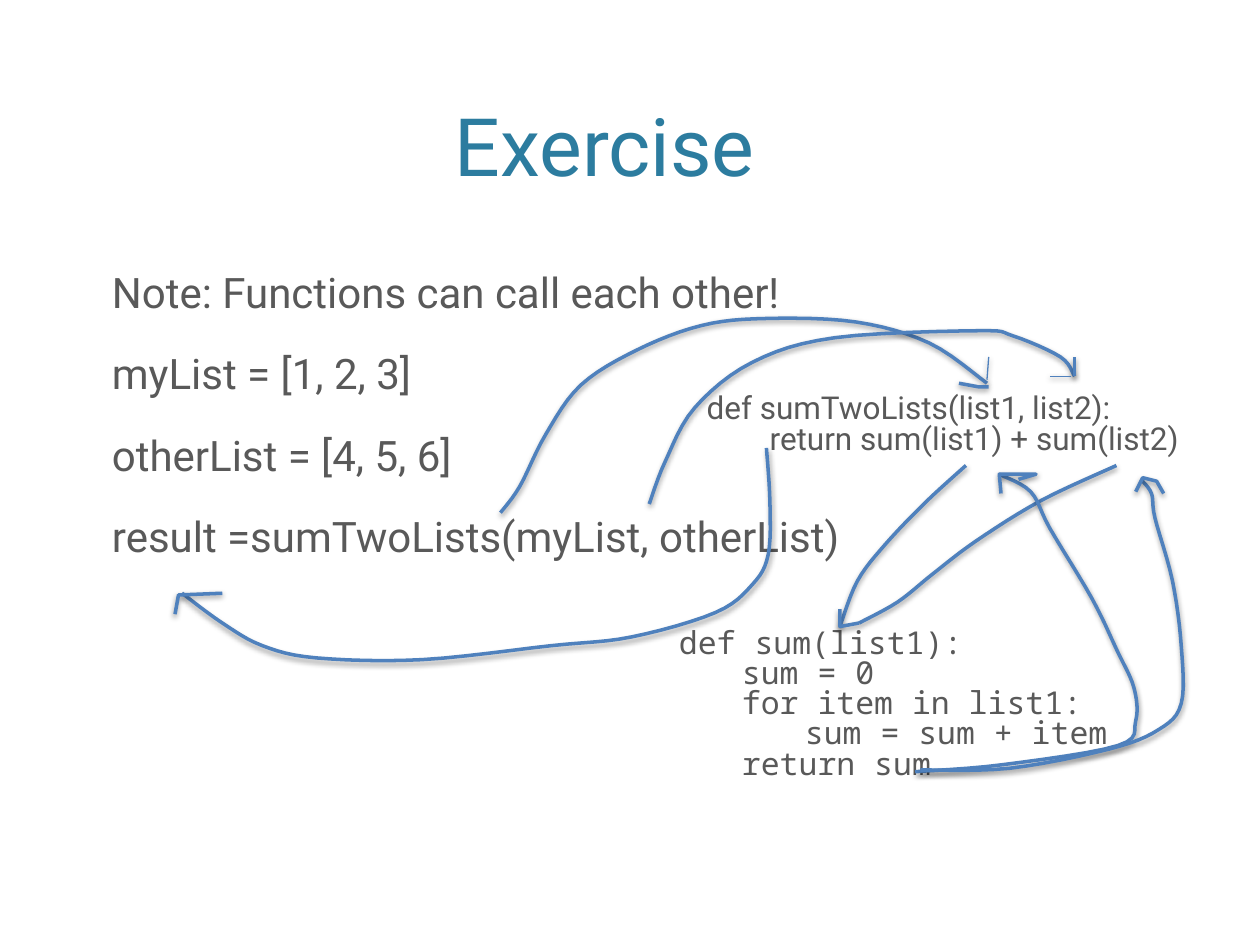
"""Build a slide showing how two list functions call each other."""
from lxml.etree import SubElement
from pptx import Presentation
from pptx.dml.color import RGBColor
from pptx.enum.shapes import MSO_CONNECTOR
from pptx.enum.text import MSO_ANCHOR, PP_ALIGN
from pptx.oxml.ns import qn
from pptx.util import Pt

TEXT_COLOR = "595959"
STROKE_COLOR = "4F81BD"
TAB_STEP = 36
CURVE_STEPS = 6

TITLE = ["Exercise"]
NOTES = [
    "Note: Functions can call each other!",
    "myList = [1, 2, 3]",
    "otherList = [4, 5, 6]",
    "result =sumTwoLists(myList, otherList)",
]
SUM_CODE = [
    "def sum(list1):",
    "\tsum = 0",
    "\tfor item in list1:",
    "\t\tsum = sum + item",
    "\treturn sum",
]
SUM_TWO_CODE = [
    "def sumTwoLists(list1, list2):",
    "\treturn sum(list1) + sum(list2)",
]

CURVES = {
    "my_list_to_list1": [(286, 293), (297, 278), (312, 248), (332, 220), (364, 200),
                         (401, 186), (438, 182), (489, 184), (531, 196), (564, 219)],
    "other_list_to_list2": [(371, 288), (380, 264), (397, 233), (430, 207), (477, 193),
                            (559, 189), (579, 192), (606, 204), (614, 215)],
    "list1_to_sum": [(552, 266), (529, 287), (506, 311), (490, 332), (480, 358)],
    "list2_to_sum": [(638, 266), (595, 286), (558, 309), (533, 328), (513, 344), (491, 356)],
    "sum_to_first_call": [(523, 441), (573, 437), (639, 426), (649, 412), (648, 393),
                          (638, 371), (624, 342), (600, 302), (589, 281), (571, 271)],
    "sum_to_second_call": [(526, 440), (577, 439), (634, 428), (662, 417), (675, 402),
                           (675, 369), (670, 332), (660, 296), (658, 282), (652, 274)],
    "return_to_result": [(438, 256), (440, 287), (439, 317), (430, 334), (409, 350),
                         (361, 364), (315, 369), (241, 377), (181, 376), (150, 369),
                         (127, 356), (104, 339)],
}
ARROWHEADS = [
    [(565, 221), (559, 221), (548, 219)],
    [(614, 215), (614, 204)],
    [(491, 356), (480, 358), (480, 348)],
    [(572, 282), (571, 271), (592, 271), (582, 274)],
    [(649, 281), (653, 273), (661, 275), (665, 282)],
    [(100, 351), (102, 340), (127, 339)],
]
THIN_LINES = [((565, 204), (564, 217)), ((600, 215), (612, 215))]


def color(value):
    return RGBColor.from_string(value)


def add_text(slide, lines, place, size, font="Roboto", fill=TEXT_COLOR, top=3.6,
             gap=0, spacing=0.8, align=PP_ALIGN.LEFT, anchor=MSO_ANCHOR.TOP):
    box = slide.shapes.add_textbox(*map(Pt, place))
    frame = box.text_frame
    frame.word_wrap = True
    frame.margin_top = Pt(top)
    frame.vertical_anchor = anchor
    for index, line in enumerate(lines):
        para = frame.add_paragraph() if index else frame.paragraphs[0]
        para.alignment = align
        para.line_spacing = spacing
        if index and gap:
            para.space_before = Pt(gap)
        if "\t" in line:
            tabs = SubElement(para._p.get_or_add_pPr(), qn("a:tabLst"))
            for stop in range(1, line.count("\t") + 1):
                SubElement(tabs, qn("a:tab"), pos=str(Pt(TAB_STEP * stop)), algn="l")
        span = para.add_run()
        span.text = line
        span.font.size = Pt(size)
        span.font.name = font
        span.font.color.rgb = color(fill)


def smooth(points):
    """Return points along a Catmull-Rom curve through the given points."""
    padded = [points[0], *points, points[-1]]
    curve = [points[0]]
    for before, start, end, after in zip(padded, padded[1:], padded[2:], padded[3:]):
        for step in range(1, CURVE_STEPS + 1):
            t = step / CURVE_STEPS
            curve.append(tuple(
                b + ((c - a) * t + (2 * a - 5 * b + 4 * c - d) * t ** 2
                     + (3 * b - a - 3 * c + d) * t ** 3) / 2
                for a, b, c, d in zip(before, start, end, after)))
    return curve


def style_stroke(shape, width):
    shape.line.color.rgb = color(STROKE_COLOR)
    shape.line.width = Pt(width)
    effects = SubElement(shape._element.spPr, qn("a:effectLst"))
    shadow = SubElement(effects, qn("a:outerShdw"), blurRad=str(Pt(3.1)),
                        dist=str(Pt(1.6)), dir="5400000", rotWithShape="0")
    black = SubElement(shadow, qn("a:srgbClr"), val="000000")
    SubElement(black, qn("a:alpha"), val="38000")


def add_stroke(slide, points):
    scaled = [(Pt(x), Pt(y)) for x, y in points]
    builder = slide.shapes.build_freeform(*scaled[0])
    builder.add_line_segments(scaled[1:], close=False)
    shape = builder.convert_to_shape()
    shape.fill.background()
    style_stroke(shape, 2)


def add_line(slide, start, end):
    ends = map(Pt, start + end)
    style_stroke(slide.shapes.add_connector(MSO_CONNECTOR.STRAIGHT, *ends), 0.75)


def main():
    deck = Presentation()
    deck.slide_width, deck.slide_height = Pt(720), Pt(540)
    slide = deck.slides.add_slide(deck.slide_layouts[6])
    add_text(slide, TITLE, (14.4, 8.64, 662.4, 105.12), 46, fill="2C7C9F",
             spacing=1, align=PP_ALIGN.CENTER, anchor=MSO_ANCHOR.BOTTOM)
    add_text(slide, NOTES, (56.88, 131.04, 585.36, 342), 24, top=26.6, gap=23.5)
    add_text(slide, SUM_CODE, (380.88, 356.4, 261.36, 116.64), 18, "Noto Sans Mono")
    add_text(slide, SUM_TWO_CODE, (396.72, 222.48, 323.28, 64.08), 18)
    for points in CURVES.values():
        add_stroke(slide, smooth(points))
    for points in ARROWHEADS:
        add_stroke(slide, points)
    for start, end in THIN_LINES:
        add_line(slide, start, end)
    deck.save("out.pptx")


if __name__ == "__main__":
    main()
